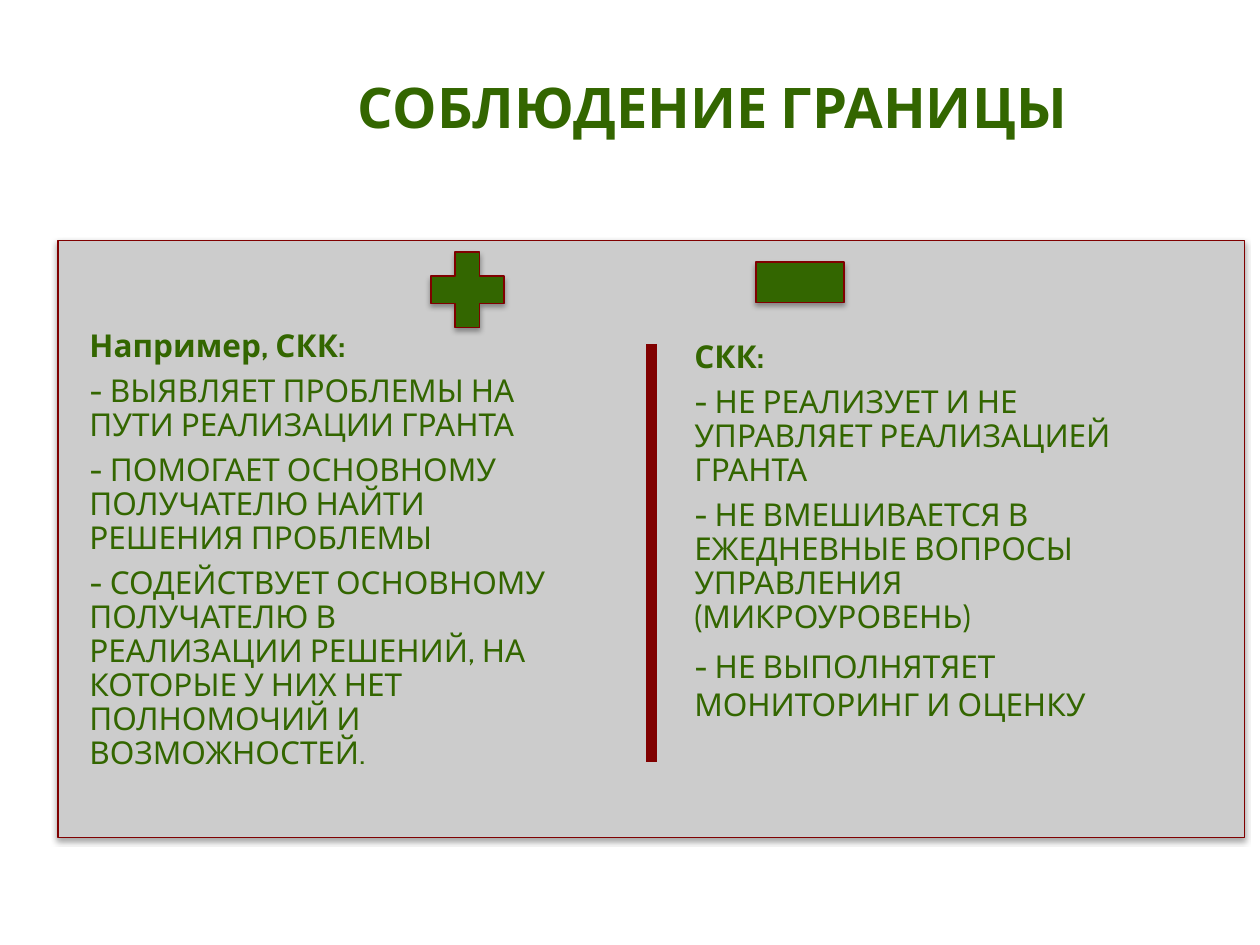
from lxml import etree
from pptx import Presentation
from pptx.dml.color import RGBColor
from pptx.enum.shapes import MSO_CONNECTOR, MSO_SHAPE
from pptx.enum.text import MSO_ANCHOR, PP_ALIGN
from pptx.oxml.ns import qn
from pptx.util import Inches, Pt

RECTANGLE, CROSS = MSO_SHAPE.RECTANGLE, MSO_SHAPE.CROSS
STRAIGHT = MSO_CONNECTOR.STRAIGHT
MIDDLE, TOP = MSO_ANCHOR.MIDDLE, MSO_ANCHOR.TOP
CENTER, LEFT = PP_ALIGN.CENTER, PP_ALIGN.LEFT

FONT = "Cabin"
GREEN, DARK_RED, GREY, BLACK = "336600", "800000", "CCCCCC", "000000"
TITLE_ONLY = 5

DUTIES = [
    "Например, СКК:",
    "- ВЫЯВЛЯЕТ ПРОБЛЕМЫ НА ПУТИ РЕАЛИЗАЦИИ ГРАНТА",
    "- ПОМОГАЕТ ОСНОВНОМУ ПОЛУЧАТЕЛЮ НАЙТИ РЕШЕНИЯ ПРОБЛЕМЫ",
    "- СОДЕЙСТВУЕТ ОСНОВНОМУ ПОЛУЧАТЕЛЮ В РЕАЛИЗАЦИИ РЕШЕНИЙ, "
    "НА КОТОРЫЕ У НИХ НЕТ ПОЛНОМОЧИЙ И ВОЗМОЖНОСТЕЙ.",
]
LIMITS = [
    "СКК:",
    "- НЕ РЕАЛИЗУЕТ И НЕ УПРАВЛЯЕТ РЕАЛИЗАЦИЕЙ ГРАНТА",
    "- НЕ ВМЕШИВАЕТСЯ В ЕЖЕДНЕВНЫЕ ВОПРОСЫ УПРАВЛЕНИЯ (МИКРОУРОВЕНЬ)",
    "- НЕ ВЫПОЛНЯТЯЕТ МОНИТОРИНГ И ОЦЕНКУ",
]


def color(value):
    """Return the colour for a hex string."""
    return RGBColor.from_string(value)


def style_paragraph(paragraph, size, bold, alignment):
    """Set the font and alignment of one paragraph."""
    paragraph.alignment = alignment
    paragraph.font.name = FONT
    paragraph.font.size = Pt(size)
    paragraph.font.bold = bold
    paragraph.font.color.rgb = color(GREEN)


def set_title(slide, text):
    """Place and format the slide title."""
    title = slide.shapes.title
    title.left, title.top = Inches(1.58), Inches(0.5)
    title.width, title.height = Inches(8.25), Inches(0.69)
    title.text_frame.text = text
    title.text_frame.vertical_anchor = MIDDLE
    style_paragraph(title.text_frame.paragraphs[0], 32, True, CENTER)


def add_shadow(shape):
    """Give a shape a soft shadow that falls downwards."""
    shape.shadow.inherit = False
    effects = shape._element.spPr.find(qn("a:effectLst"))
    shadow = etree.SubElement(
        effects, qn("a:outerShdw"), blurRad=str(Pt(3.1)), dist=str(Pt(1.8)),
        dir="5400000", rotWithShape="0")
    shade = etree.SubElement(shadow, qn("a:srgbClr"), val=BLACK)
    etree.SubElement(shade, qn("a:alpha"), val="35000")


def add_block(slide, kind, left, top, width, height, fill):
    """Add a filled, red-edged shape with a shadow."""
    shape = slide.shapes.add_shape(
        kind, Inches(left), Inches(top), Inches(width), Inches(height))
    shape.fill.solid()
    shape.fill.fore_color.rgb = color(fill)
    shape.line.color.rgb = color(DARK_RED)
    shape.line.width = Pt(0.75)
    add_shadow(shape)
    return shape


def add_column(slide, left, top, width, height, lines, tight_lines):
    """Add a text column with a bold heading and tightly set lines."""
    box = slide.shapes.add_textbox(
        Inches(left), Inches(top), Inches(width), Inches(height))
    frame = box.text_frame
    frame.word_wrap = True
    frame.vertical_anchor = TOP
    frame.margin_left = frame.margin_right = Inches(0.04)
    frame.margin_top = frame.margin_bottom = Inches(0.04)
    for index, line in enumerate(lines):
        paragraph = frame.add_paragraph() if index else frame.paragraphs[0]
        paragraph.text = line
        style_paragraph(paragraph, 18, index == 0, LEFT)
        if index < tight_lines:
            paragraph.line_spacing = 0.9
            paragraph.space_after = Pt(6.3)


def add_divider(slide, x, top, bottom):
    """Add the thick vertical line between the columns."""
    divider = slide.shapes.add_connector(
        STRAIGHT, Inches(x), Inches(top), Inches(x), Inches(bottom))
    divider.line.color.rgb = color(DARK_RED)
    divider.line.width = Pt(6)
    etree.SubElement(divider._element.spPr, qn("a:effectLst"))


def main():
    """Build and save the slide."""
    presentation = Presentation()
    presentation.slide_width = Inches(10)
    presentation.slide_height = Inches(7.5)
    slide = presentation.slides.add_slide(presentation.slide_layouts[TITLE_ONLY])
    set_title(slide, "СОБЛЮДЕНИЕ ГРАНИЦЫ ")
    add_block(slide, RECTANGLE, 0.46, 1.91, 9.42, 4.74, GREY)
    add_column(slide, 0.67, 2.58, 3.74, 3.81, DUTIES, 4)
    add_column(slide, 5.47, 2.67, 3.62, 3.47, LIMITS, 3)
    plus = add_block(slide, CROSS, 3.42, 2, 0.58, 0.6, GREEN)
    plus.adjustments[0] = 0.33
    add_block(slide, RECTANGLE, 6, 2.08, 0.7, 0.32, GREEN)
    add_divider(slide, 5.17, 2.73, 6.05)
    presentation.save("out.pptx")


if __name__ == "__main__":
    main()
